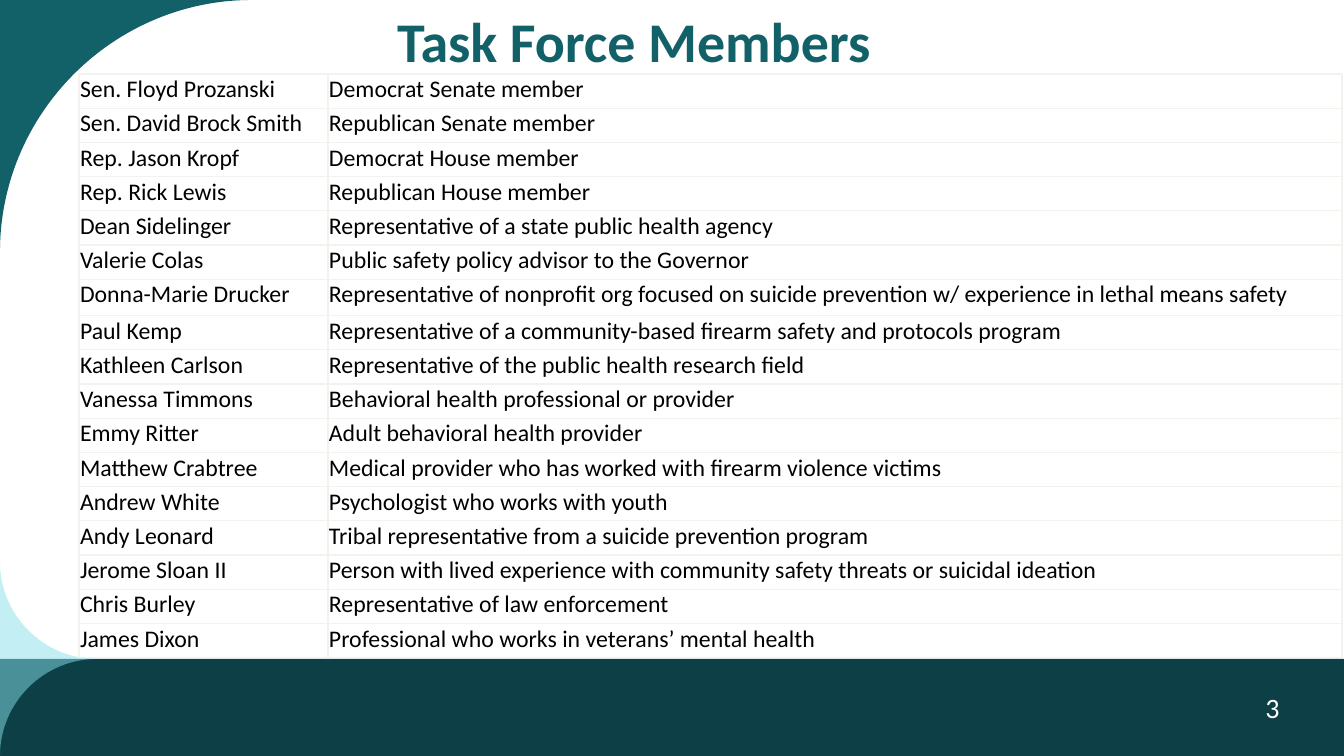
import pptx
import pptx.dml.color
import pptx.enum.shapes
import pptx.enum.text
import pptx.oxml
import pptx.oxml.ns
import pptx.util

EMU_PER_PX = 914400 / 100.8
WIDTH, HEIGHT = 1344, 756
FOOTER_TOP = 659
LONG_ROW, LONG_ROW_EXTRA = 6, 2
CIRCLE_PULL = 0.55

MEMBERS = [
    ("Sen. Floyd Prozanski", "Democrat Senate member"),
    ("Sen. David Brock Smith", "Republican Senate member"),
    ("Rep. Jason Kropf", "Democrat House member"),
    ("Rep. Rick Lewis", "Republican House member"),
    ("Dean Sidelinger", "Representative of a state public health agency"),
    ("Valerie Colas", "Public safety policy advisor to the Governor"),
    ("Donna-Marie Drucker", "Representative of nonprofit org focused on suicide prevention "
                            "w/ experience in lethal means safety"),
    ("Paul Kemp", "Representative of a community-based firearm safety and protocols program"),
    ("Kathleen Carlson", "Representative of the public health research field"),
    ("Vanessa Timmons", "Behavioral health professional or provider"),
    ("Emmy Ritter", "Adult behavioral health provider"),
    ("Matthew Crabtree", "Medical provider who has worked with firearm violence victims"),
    ("Andrew White", "Psychologist who works with youth"),
    ("Andy Leonard", "Tribal representative from a suicide prevention program"),
    ("Jerome Sloan II", "Person with lived experience with community safety threats or suicidal ideation"),
    ("Chris Burley", "Representative of law enforcement"),
    ("James Dixon", "Professional who works in veterans’ mental health"),
]


def px(length):
    return pptx.util.Emu(round(length * EMU_PER_PX))


def color(value):
    return pptx.dml.color.RGBColor.from_string(value)


def write(frame, text, size, fill, bold=False, align="LEFT", anchor="MIDDLE", spacing=None, after=0):
    frame.word_wrap = True
    frame.vertical_anchor = pptx.enum.text.MSO_ANCHOR[anchor]
    para = frame.paragraphs[0]
    para.alignment = pptx.enum.text.PP_ALIGN[align]
    para.line_spacing = spacing
    para.space_after = pptx.util.Pt(after)
    span = para.add_run()
    span.text = text
    span.font.name = "Calibri"
    span.font.size = pptx.util.Pt(size)
    span.font.bold = bold
    span.font.color.rgb = color(fill)


def paint(shape, fill, opacity=100):
    shape.shadow.inherit = False
    shape.line.fill.background()
    shape.fill.solid()
    shape.fill.fore_color.rgb = color(fill)
    if opacity < 100:
        tint = shape._element.spPr.find(".//" + pptx.oxml.ns.qn("a:srgbClr"))
        alpha = pptx.oxml.parse_xml(
            f'<a:alpha {pptx.oxml.ns.nsdecls("a")} val="{opacity * 1000}"/>')
        tint.append(alpha)


def quarter(start, corner, end):
    pulls = [tuple(a + (b - a) * CIRCLE_PULL for a, b in zip(point, corner))
             for point in (start, end)]
    return [*pulls, end]


def add_outline(page, start, segments, fill, opacity=100):
    builder = page.shapes.build_freeform(px(start[0]), px(start[1]))
    builder.add_line_segments([(px(x), px(y)) for segment in segments for x, y in segment])
    shape = builder.convert_to_shape()
    lines = iter(list(shape._element.iter(pptx.oxml.ns.qn("a:lnTo"))))
    for segment in segments:
        group = [next(lines) for point in segment]
        if len(group) == 3:
            curve = pptx.oxml.parse_xml(f'<a:cubicBezTo {pptx.oxml.ns.nsdecls("a")}/>')
            group[0].addprevious(curve)
            for line in group:
                curve.append(line[0])
                line.getparent().remove(line)
    paint(shape, fill, opacity)


def add_corner(page, left, top, size):
    corner, right, bottom = (left, top), (left + size, top), (left, top + size)
    add_outline(page, bottom, [[corner], [right], quarter(right, corner, bottom)], "126169")


def add_footer(page, left, top, width, height):
    band = page.shapes.add_shape(pptx.enum.shapes.MSO_SHAPE.RECTANGLE,
                                 px(left), px(top), px(width), px(height))
    paint(band, "0C4046")
    above, below = (left, top - height), (left, top + height)
    corner, tip = (left, top), (left + height, top)
    add_outline(page, above, [quarter(above, corner, tip), quarter(tip, corner, below), [above]],
                "89E1EB", opacity=50)
    number_width = 143
    number = page.shapes.add_textbox(px(left + width - number_width), px(top),
                                     px(number_width), px(height))
    write(number.text_frame, "3", 20, "FFFFFF", align="CENTER")


def add_title(page, left, top, width, height):
    title = page.shapes.title
    title.left, title.top, title.width, title.height = map(px, (left, top, width, height))
    title.text_frame.auto_size = pptx.enum.text.MSO_AUTO_SIZE.NONE
    write(title.text_frame, "Task Force Members", 40, "126169", bold=True, spacing=0.9)


def add_borders(cell):
    properties = cell._tc.get_or_add_tcPr()
    for side in "LRTB":
        properties.append(pptx.oxml.parse_xml(
            f'<a:ln{side} {pptx.oxml.ns.nsdecls("a")} w="12700"><a:solidFill>'
            f'<a:srgbClr val="F4F2EC"/></a:solidFill></a:ln{side}>'))


def add_members(page, left, top, width, height):
    name_width = 249
    count = len(MEMBERS)
    table = page.shapes.add_table(count, 2, px(left), px(top), px(width), px(height)).table
    table.first_row = table.horz_banding = False
    table.columns[0].width = px(name_width)
    table.columns[1].width = px(width - name_width)
    row_height = (height - LONG_ROW_EXTRA) / count
    for index, member in enumerate(MEMBERS):
        table.rows[index].height = px(row_height + LONG_ROW_EXTRA * (index == LONG_ROW))
        for column, text in enumerate(member):
            cell = table.cell(index, column)
            cell.margin_left = cell.margin_right = cell.margin_top = cell.margin_bottom = px(1)
            add_borders(cell)
            cell.fill.background()
            write(cell.text_frame, text, 17, "000000", anchor="TOP", after=2)


def add_members_page(deck):
    page = deck.slides.add_slide(deck.slide_layouts[5])
    page.background.fill.solid()
    page.background.fill.fore_color.rgb = color("FFFFFF")
    add_footer(page, 0, FOOTER_TOP, WIDTH, HEIGHT - FOOTER_TOP)
    add_corner(page, 0, 0, 252)
    add_title(page, 387, -62, 1050, 212)
    add_members(page, 79, 74, 1263, 584)


def main():
    deck = pptx.Presentation()
    deck.slide_width, deck.slide_height = px(WIDTH), px(HEIGHT)
    add_members_page(deck)
    deck.save("out.pptx")


if __name__ == "__main__":
    main()
